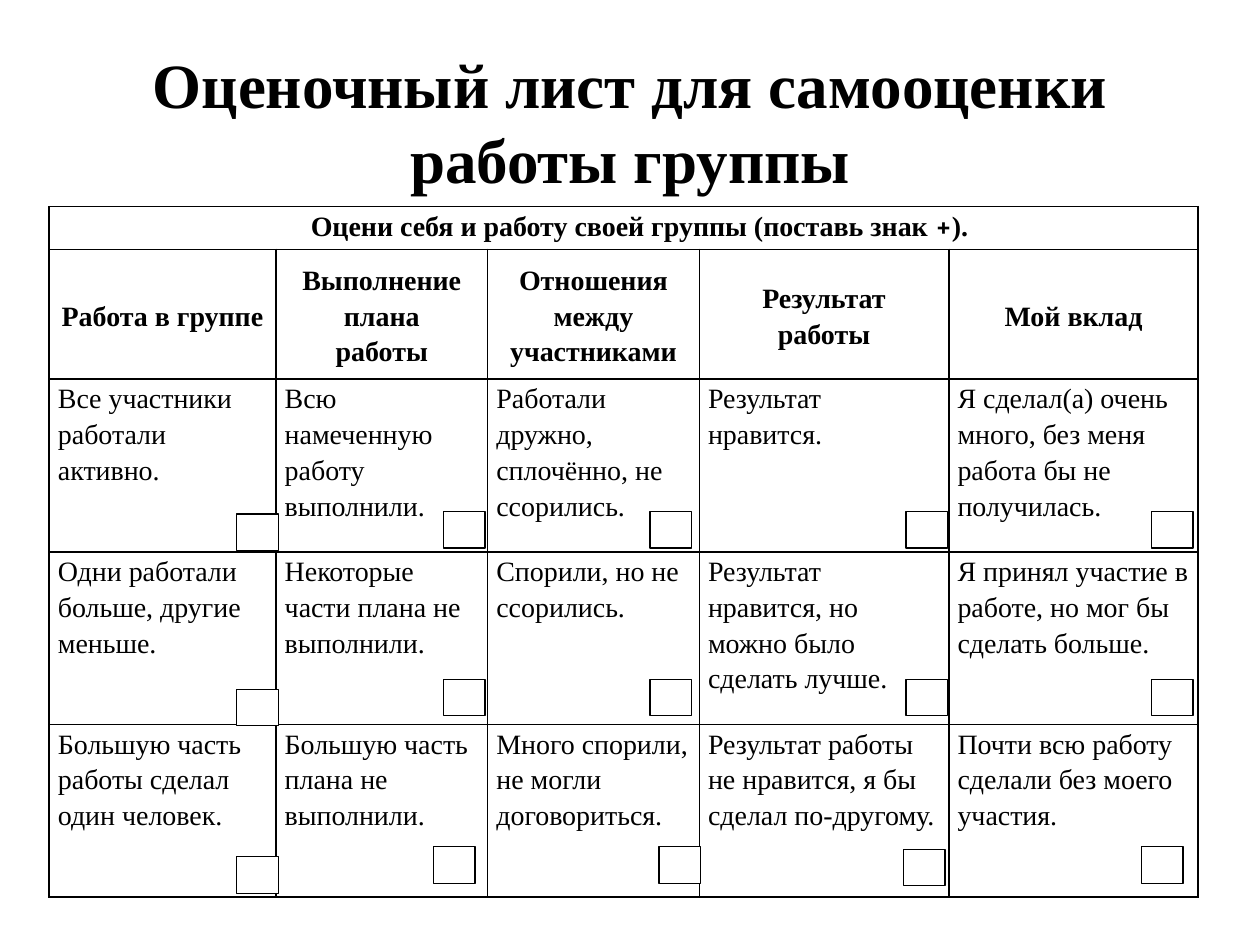
from typing import NamedTuple

from lxml.etree import SubElement
from pptx import Presentation
from pptx.dml.color import RGBColor
from pptx.enum.shapes import MSO_SHAPE as Shape
from pptx.enum.text import MSO_ANCHOR as Anchor, PP_ALIGN as Align
from pptx.oxml.ns import qn
from pptx.util import Inches, Pt

COLORS = {"ink": "000000", "paper": "FFFFFF"}
FONT = "Times New Roman"
PLUS_FONT = "Cambria"

TITLE = "Оценочный лист для самооценки работы группы"
INSTRUCTION = ("Оцени себя и работу своей группы (поставь знак ", "+", ").")
COLUMN_WIDTHS = (1.8, 1.68, 1.68, 1.98, 1.98)
ROW_HEIGHTS = (0.34, 1.03, 1.37, 1.37, 1.37)
CRITERIA = (
    "Работа в группе",
    "Выполнение плана\nработы",
    "Отношения между\nучастниками",
    "Результат\nработы",
    "Мой вклад",
)
ANSWERS = (
    (
        "Все участники работали активно.",
        "Всю намеченную работу выполнили.",
        "Работали дружно, сплочённо, не ссорились.",
        "Результат нравится.",
        "Я сделал(а) очень много, без меня работа бы не получилась.",
    ),
    (
        "Одни работали больше, другие меньше.",
        "Некоторые части плана не выполнили.",
        "Спорили, но не ссорились.",
        "Результат нравится, но можно было сделать лучше.",
        "Я принял участие в работе, но мог бы сделать больше.",
    ),
    (
        "Большую часть работы сделал один человек.",
        "Большую часть плана не выполнили.",
        "Много спорили, не могли договориться.",
        "Результат работы не нравится, я бы сделал по-другому.",
        "Почти всю работу сделали без моего участия.",
    ),
)


class Checkbox(NamedTuple):
    left: float
    top: float


UPPER_LEFTS = (3.52, 5.16, 7.19, 9.14)
CHECKBOXES = (
    [Checkbox(1.88, top) for top in (4.08, 5.47, 6.8)]
    + [Checkbox(left, top) for top in (4.06, 5.39) for left in UPPER_LEFTS]
    + [Checkbox(left, 6.72) for left in (3.44, 5.23, 9.06)]
    + [Checkbox(7.17, 6.74)]
)


def rgb(name: str) -> RGBColor:
    return RGBColor.from_string(COLORS[name])


def style_paragraph(paragraph, size: float, bold: bool, align: Align) -> None:
    paragraph.alignment = align
    font = paragraph.font
    font.name, font.size, font.bold = FONT, Pt(size), bold
    font.color.rgb = rgb("ink")


def add_title(slide) -> None:
    box = slide.shapes.add_textbox(Inches(0.5), Inches(0.62), Inches(9), Inches(1.25))
    frame = box.text_frame
    frame.word_wrap = True
    frame.vertical_anchor = Anchor.MIDDLE
    frame.margin_bottom = Inches(0.62)  # lifts the heading clear of the table
    frame.text = TITLE
    style_paragraph(frame.paragraphs[0], 36, True, Align.CENTER)


def format_cell(cell, bold: bool, align: Align, anchor: Anchor) -> None:
    cell.margin_left = cell.margin_right = Inches(0.07)
    cell.margin_top = cell.margin_bottom = 0
    cell.vertical_anchor = anchor
    for paragraph in cell.text_frame.paragraphs:
        paragraph.line_spacing = 1.15
        style_paragraph(paragraph, 16, bold, align)
    properties = cell._tc.get_or_add_tcPr()
    for side in ("a:lnL", "a:lnR", "a:lnT", "a:lnB"):
        border = SubElement(properties, qn(side), w=str(Pt(1)))
        SubElement(SubElement(border, qn("a:solidFill")), qn("a:srgbClr"), val=COLORS["ink"])
    cell.fill.solid()
    cell.fill.fore_color.rgb = rgb("paper")


def add_assessment_table(slide) -> None:
    table = slide.shapes.add_table(
        len(ROW_HEIGHTS), len(COLUMN_WIDTHS),
        Inches(0.39), Inches(1.64), Inches(sum(COLUMN_WIDTHS)), Inches(sum(ROW_HEIGHTS)),
    ).table
    table.first_row = table.horz_banding = False
    for column, width in zip(table.columns, COLUMN_WIDTHS):
        column.width = Inches(width)
    for row, height in zip(table.rows, ROW_HEIGHTS):
        row.height = Inches(height)

    heading = table.cell(0, 0)
    heading.merge(table.cell(0, len(COLUMN_WIDTHS) - 1))
    instruction = heading.text_frame.paragraphs[0]
    indent = instruction._p.get_or_add_pPr()
    indent.set("marL", str(Inches(0.25)))
    indent.set("indent", "0")
    for part in INSTRUCTION:
        run = instruction.add_run()
        run.text = part
        if part == "+":
            run.font.name = PLUS_FONT
    for cell in table.rows[0].cells:
        format_cell(cell, True, Align.CENTER, Anchor.TOP)

    for row_index, texts in enumerate((CRITERIA, *ANSWERS), start=1):
        is_header = row_index == 1
        align = Align.CENTER if is_header else Align.LEFT
        anchor = Anchor.MIDDLE if is_header else Anchor.TOP
        for cell, text in zip(table.rows[row_index].cells, texts):
            cell.text = text
            format_cell(cell, is_header, align, anchor)


def add_checkbox(slide, checkbox: Checkbox) -> None:
    square = slide.shapes.add_shape(
        Shape.RECTANGLE, Inches(checkbox.left), Inches(checkbox.top), Inches(0.33), Inches(0.29)
    )
    square.shadow.inherit = False
    square.fill.solid()
    square.fill.fore_color.rgb = rgb("paper")
    square.line.color.rgb = rgb("ink")
    square.line.width = Pt(0.75)


def main() -> None:
    deck = Presentation()
    deck.slide_width, deck.slide_height = Inches(10), Inches(7.5)
    slide = deck.slides.add_slide(deck.slide_layouts[6])
    add_title(slide)
    add_assessment_table(slide)
    for checkbox in CHECKBOXES:
        add_checkbox(slide, checkbox)
    deck.save("out.pptx")


if __name__ == "__main__":
    main()
